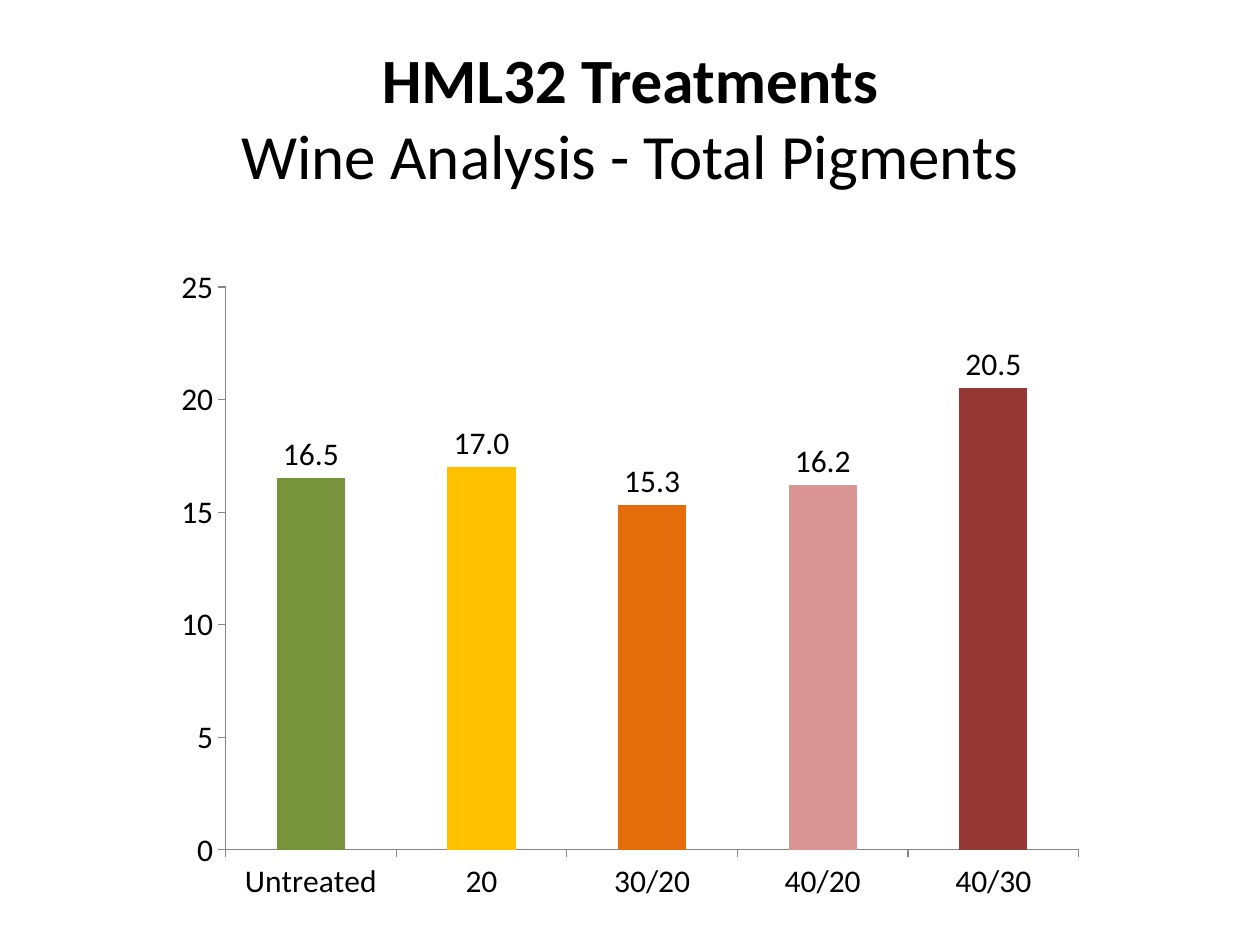
from lxml import etree
from pptx import Presentation
from pptx.chart.data import CategoryChartData
from pptx.dml.color import RGBColor
from pptx.enum.chart import XL_CHART_TYPE, XL_LABEL_POSITION, XL_TICK_MARK
from pptx.enum.text import MSO_ANCHOR, PP_ALIGN
from pptx.util import Pt

COLUMN = XL_CHART_TYPE.COLUMN_CLUSTERED
OUTSIDE_END = XL_LABEL_POSITION.OUTSIDE_END
TICK_OUT = XL_TICK_MARK.OUTSIDE
MIDDLE, CENTER = MSO_ANCHOR.MIDDLE, PP_ALIGN.CENTER

FONT = "Calibri"
BLACK = RGBColor(0x00, 0x00, 0x00)
GRAY = RGBColor(0x86, 0x86, 0x86)
BLUE = RGBColor(0x4F, 0x81, 0xBD)
GREEN = RGBColor(0x77, 0x93, 0x3C)
YELLOW = RGBColor(0xFF, 0xC0, 0x00)
ORANGE = RGBColor(0xE4, 0x6C, 0x0A)
PINK = RGBColor(0xD9, 0x96, 0x94)
DARK_RED = RGBColor(0x95, 0x37, 0x35)

# Content
TITLE = [("HML32 Treatments", True), ("Wine Analysis - Total Pigments", False)]
PIGMENTS = [
    ("Untreated", 16.5, GREEN),
    ("20", 17.0, YELLOW),
    ("30/20", 15.3, ORANGE),
    ("40/20", 16.2, PINK),
    ("40/30", 20.5, DARK_RED),
]
TITLE_BOX = (36, 21.6, 648, 90)
CHART_BOX = (93.6, 116.64, 527.04, 402.48)
PLOT = {"x": 0.067, "y": 0.118, "w": 0.925, "h": 0.799}


def style_font(font, size, bold=False):
    font.name, font.size, font.bold = FONT, Pt(size), bold
    font.color.rgb = BLACK


def add_run(p, text, size=36, bold=False):
    r = p.add_run()
    r.text = text
    style_font(r.font, size, bold)


def place_plot(chart, box):
    """Fix the inner plot area as fractions of the chart."""
    area = chart._chartSpace.chart.plotArea
    ns = area.nsmap["c"]
    for old in area.findall(f"{{{ns}}}layout"):
        area.remove(old)
    layout = etree.Element(f"{{{ns}}}layout")
    manual = etree.SubElement(layout, f"{{{ns}}}manualLayout")
    settings = {"layoutTarget": "inner", "xMode": "edge", "yMode": "edge", **box}
    for tag, value in settings.items():
        etree.SubElement(manual, f"{{{ns}}}{tag}").set("val", str(value))
    area.insert(0, layout)


prs = Presentation()
prs.slide_width, prs.slide_height = Pt(720), Pt(540)
s = prs.slides.add_slide(prs.slide_layouts[6])

# Title
tf = s.shapes.add_textbox(*map(Pt, TITLE_BOX)).text_frame
tf.word_wrap = True
tf.vertical_anchor = MIDDLE
p = tf.paragraphs[0]
p.alignment = CENTER
for i, (text, bold) in enumerate(TITLE):
    if i:
        p.add_line_break()
    add_run(p, text, bold=bold)

# Chart
names, values, colors = zip(*PIGMENTS)
data = CategoryChartData()
data.categories = names
data.add_series("Series 1", values)
chart = s.shapes.add_chart(COLUMN, *map(Pt, CHART_BOX), data).chart
chart.has_title = False
chart.has_legend = False
style_font(chart.font, 18)
place_plot(chart, PLOT)

# Axes
for axis in (chart.category_axis, chart.value_axis):
    axis.has_major_gridlines = False
    axis.major_tick_mark = TICK_OUT
    axis.format.line.color.rgb = GRAY
    axis.format.line.width = Pt(0.75)
value_axis = chart.value_axis
value_axis.minimum_scale, value_axis.maximum_scale = 0, 25
value_axis.major_unit = 5
value_axis.tick_labels.number_format = "0"
value_axis.tick_labels.number_format_is_linked = False

# Columns and their labels
plot = chart.plots[0]
plot.gap_width = 150
plot.vary_by_categories = False
series = plot.series[0]
series.format.fill.solid()
series.format.fill.fore_color.rgb = BLUE
for i, color in enumerate(colors):
    fill = series.points[i].format.fill
    fill.solid()
    fill.fore_color.rgb = color
labels = series.data_labels
labels.show_value = True
labels.number_format = "#,##0.0"
labels.number_format_is_linked = False
labels.position = OUTSIDE_END
style_font(labels.font, 18)

prs.save("out.pptx")
